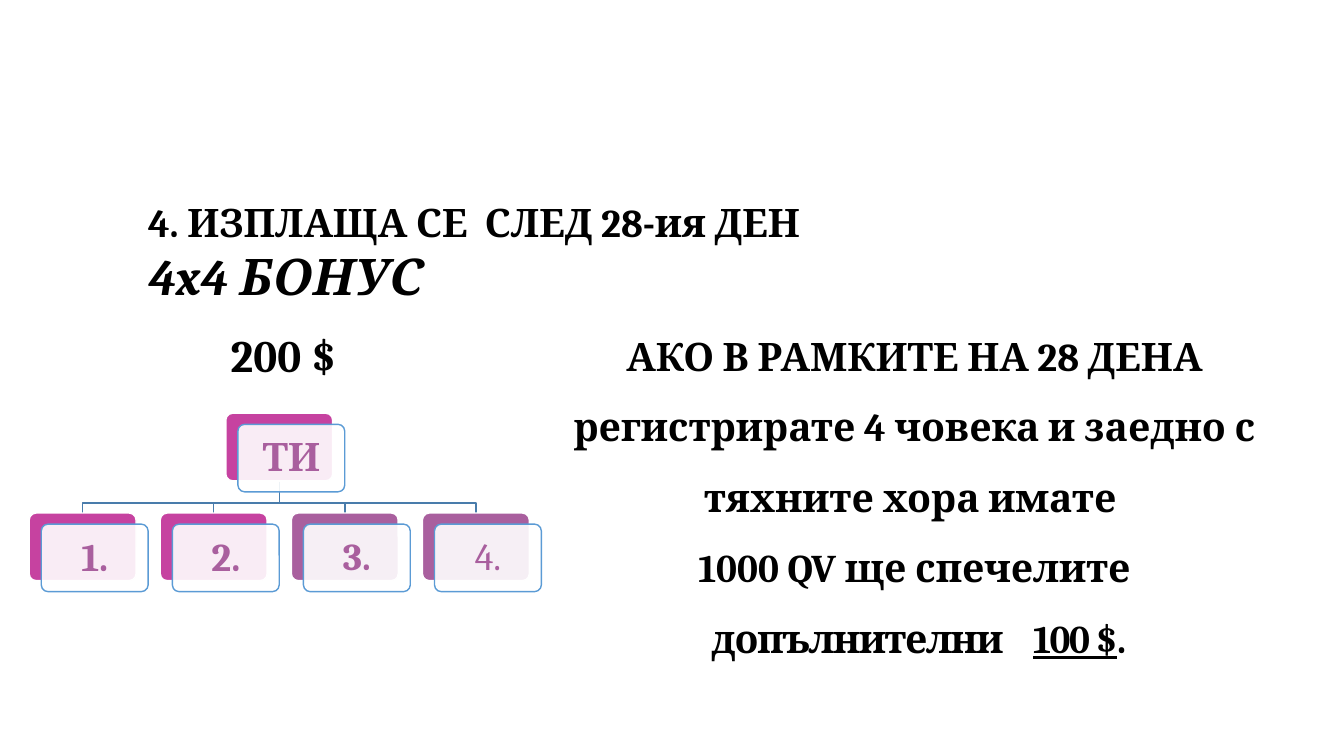
"""Slide on the 4x4 bonus: a small team chart beside the payout rule."""
from pptx import Presentation
from pptx.dml.color import RGBColor
from pptx.enum.shapes import MSO_SHAPE as SHAPE
from pptx.enum.text import MSO_ANCHOR as ANCHOR, MSO_AUTO_SIZE as AUTO, PP_ALIGN as ALIGN
from pptx.oxml.ns import qn
from pptx.util import Pt
from lxml import etree

PX = 9144
COLORS = {
    "white": "FFFFFF", "black": "000000", "branch": "497CAB",
    "outline": "5B9BD5", "magenta": "C642A0", "purple": "A95F9E",
}
RGB = {name: RGBColor.from_string(value) for name, value in COLORS.items()}


def add_text(box, paras, color="black", inset=None, para_format=None, **frame_format):
    """Add a text box from paragraphs of (text, font values, spacing) runs."""
    tf = s.shapes.add_textbox(*[v * PX for v in box]).text_frame
    for name, value in {"word_wrap": True, **frame_format}.items():
        setattr(tf, name, value)
    if inset is not None:
        for side in ("left", "top", "right", "bottom"):
            setattr(tf, f"margin_{side}", inset * PX)
    for i, runs in enumerate(paras):
        p = tf.add_paragraph() if i else tf.paragraphs[0]
        for name, value in (para_format or {}).items():
            setattr(p, name, value)
        for text, font, spacing in runs:
            r = p.add_run()
            r.text = text
            for name, value in {"name": "Cambria", "bold": True, **font}.items():
                setattr(r.font, name, value)
            r.font.color.rgb = RGB[color]
            if spacing:
                r.font._element.set("spc", str(spacing))
    return tf


def add_card(x, y, fill, line):
    """Add one rounded card of the team chart."""
    sp = s.shapes.add_shape(SHAPE.ROUNDED_RECTANGLE, x * PX, y * PX, 106 * PX, 67 * PX)
    sp.adjustments[0] = 0.1
    sp.shadow.inherit = False
    sp.fill.solid()
    sp.fill.fore_color.rgb = RGB[fill]
    sp.line.color.rgb = RGB[line]
    sp.line.width = Pt(1)
    return sp


prs = Presentation()
prs.slide_width, prs.slide_height = 1333 * PX, 750 * PX
s = prs.slides.add_slide(prs.slide_layouts[6])

size28 = {"size": Pt(28)}
title = add_text((137, 192, 956, 118), [
    [("4. ИЗПЛАЩА СЕ", size28, 0), (" ", size28, 600), ("СЛЕД 28-ия ДЕН", size28, 0)],
    [("4x4 БОНУС", {"size": Pt(36), "italic": True}, 0)],
], auto_size=AUTO.SHAPE_TO_FIT_TEXT)
pPr = title.paragraphs[0]._p.get_or_add_pPr()
pPr.set("marL", str(50 * PX))
pPr.set("indent", str(-50 * PX))

member_xs = [29 + 130 * i for i in range(4)]
for x in reversed(member_xs):
    end = x + 53
    builder = s.shapes.build_freeform(277, 478, scale=PX)
    builder.add_line_segments([(277, 499), (end, 499), (end, 509)], close=False)
    branch = builder.convert_to_shape()
    branch.shadow.inherit = False
    branch.fill.background()
    branch.line.color.rgb = RGB["branch"]
    branch.line.width = Pt(1)

cards = [("ТИ", 224, 410, "magenta", 28, True)]
cards += [(label, x, 509, fill, size, bold) for x, (label, fill, size, bold) in zip(member_xs, [
    ("1.", "magenta", 28, True),
    ("2.", "magenta", 28, True),
    ("3.", "purple", 27, True),
    ("4.", "purple", 27, False),
])]
for label, x, y, fill, size, bold in cards:
    add_card(x, y, fill, "white")
    front = add_card(x + 12, y + 11, "white", "outline")
    color = front.fill._xPr.find(".//" + qn("a:srgbClr"))
    etree.SubElement(color, qn("a:alpha")).set("val", "90000")
    add_text((x + 14, y + 13, 102, 64), [[(label, {"size": Pt(size), "bold": bold}, 0)]],
             "purple", 12, {"alignment": ALIGN.CENTER, "line_spacing": 0.9},
             vertical_anchor=ANCHOR.MIDDLE)

add_text((522, 301, 770, 364), [
    [("АКО В РАМКИТЕ НА 28 ДЕНА регистрирате 4 човека и заедно с тяхните хора имате ",
      size28, 0)],
    [("1000 QV ще спечелите", size28, 0)],
    [(" ", size28, 0), ("допълнителни", size28, -100), (" ", size28, 1500),
     ("100 $", {**size28, "underline": True}, -100), (".", size28, -100)],
], para_format={"alignment": ALIGN.CENTER, "line_spacing": 1.5},
    auto_size=AUTO.SHAPE_TO_FIT_TEXT)
add_text((219, 320, 135, 64), [[("200 $", {"size": Pt(32)}, 0)]],
         auto_size=AUTO.SHAPE_TO_FIT_TEXT)

prs.save("out.pptx")
